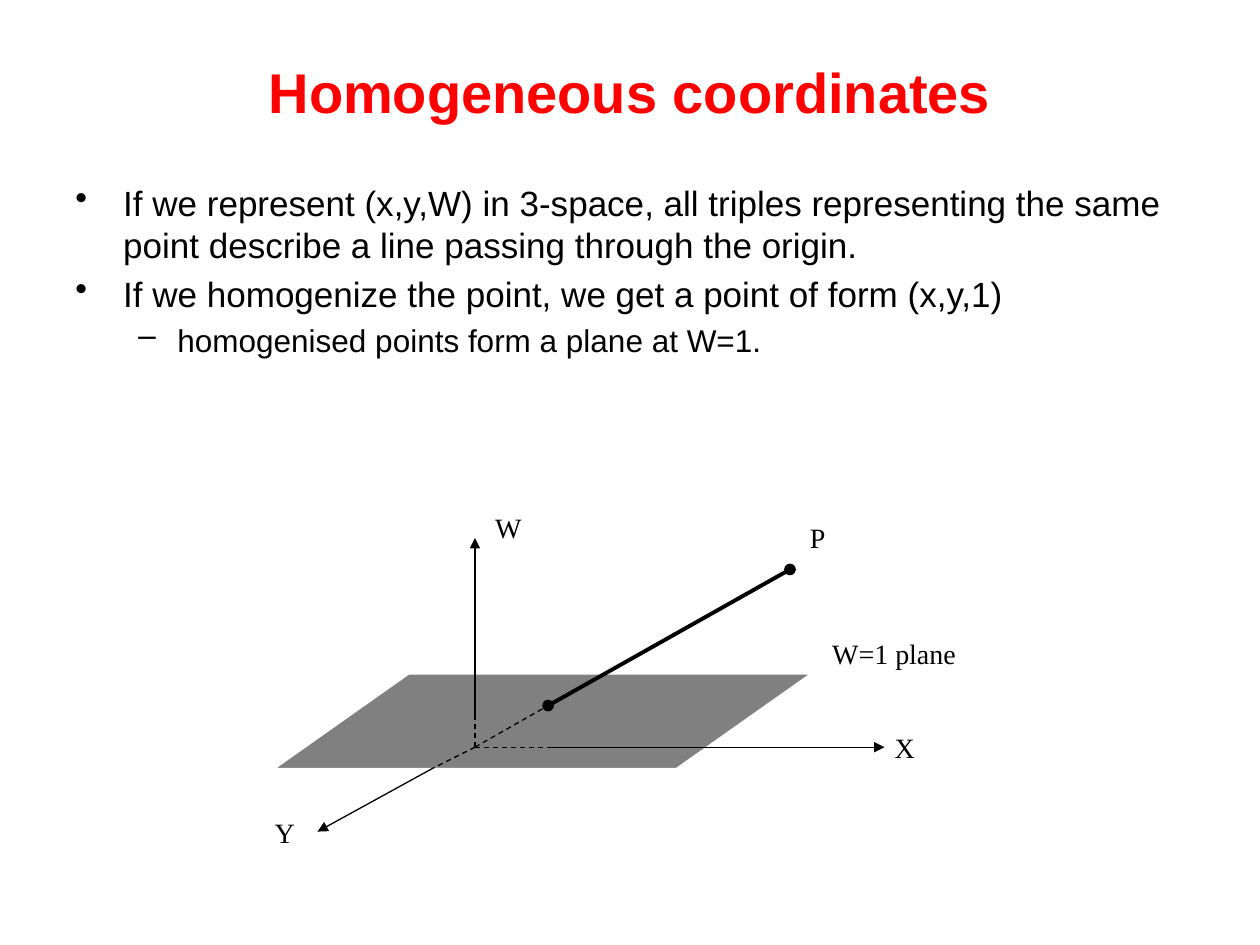
from dataclasses import dataclass

from lxml.etree import SubElement
from pptx import Presentation
from pptx.dml.color import RGBColor as Color
from pptx.enum.dml import MSO_LINE as Dash
from pptx.enum.shapes import MSO_CONNECTOR as Connector, MSO_SHAPE as Preset
from pptx.enum.text import MSO_ANCHOR as Anchor, MSO_AUTO_SIZE as AutoSize, PP_ALIGN as Align
from pptx.oxml.ns import qn
from pptx.util import Inches, Pt


@dataclass(frozen=True)
class Theme:
    title_color: Color = Color(255, 0, 0)
    ink: Color = Color(0, 0, 0)
    plane: Color = Color(128, 128, 128)
    paper: Color = Color(255, 255, 255)
    text_font: str = "Arial"
    label_font: str = "Times New Roman"
    title_size: int = 32
    body_sizes: tuple = (20, 18)
    label_size: int = 16
    thin: float = 0.75
    thick: float = 2.25


theme = Theme()
presentation = Presentation()
presentation.slide_width, presentation.slide_height = Inches(10), Inches(7.5)
slide = presentation.slides.add_slide(presentation.slide_layouts[6])

# The grid has 10 columns and 7.5 rows of square cells.
CELL = presentation.slide_width / 10


def grid(*cells):
    return [round(cell * CELL) for cell in cells]


def style(paragraph, font_name, size, color, bold=False):
    font = paragraph.font
    font.name, font.size, font.bold = font_name, Pt(size), bold
    font.color.rgb = color


# Title
title = slide.shapes.add_textbox(*grid(0.5, 0.3, 9, 0.85)).text_frame
title.word_wrap = True
title.vertical_anchor = Anchor.MIDDLE
title.text = "Homogeneous coordinates"
title.paragraphs[0].alignment = Align.CENTER
style(title.paragraphs[0], theme.text_font, theme.title_size, theme.title_color, bold=True)

# Bullets: level and text
bullets = [
    (0, "If we represent (x,y,W) in 3-space, all triples representing the same "
        "point describe a line passing through the origin."),
    (0, "If we homogenize the point, we get a point of form (x,y,1)"),
    (1, "homogenised points form a plane at W=1."),
]
levels = [("•", 0.38, 0.38), ("–", 0.81, 0.31)]  # mark, margin, hanging indent
body = slide.shapes.add_textbox(*grid(0.5, 1.39, 9, 2.37)).text_frame
body.word_wrap = True
body.text = "\n".join(text for _, text in bullets)
for paragraph, (level, _) in zip(body.paragraphs, bullets):
    mark, margin, hanging = levels[level]
    size = theme.body_sizes[level]
    paragraph.level = level
    paragraph.space_before = Pt(0.2 * size)
    style(paragraph, theme.text_font, size, theme.ink)
    properties = paragraph._p.get_or_add_pPr()
    left, indent = grid(margin, -hanging)
    properties.set("marL", str(left))
    properties.set("indent", str(indent))
    bullet = properties.makeelement(qn("a:buChar"), {"char": mark})
    properties.find(qn("a:defRPr")).addprevious(bullet)

# The plane W=1
plane = slide.shapes.add_shape(Preset.PARALLELOGRAM, *grid(2.18, 5.35, 4.25, 0.75))
plane.adjustments[0] = 1.417
plane.shadow.inherit = False
plane.fill.solid()
plane.fill.fore_color.rgb = theme.plane
plane.line.color.rgb = theme.paper
plane.line.width = Pt(theme.thin)

# Axes and the line through P, dashed where the plane hides them
origin = (3.77, 5.93)
w_exit, w_tip = (3.77, 5.68), (3.77, 4.27)
x_exit, x_tip = (4.35, 5.93), (7.02, 5.93)
y_exit, y_tip = (3.43, 6.1), (2.52, 6.6)
homogenised, point = (4.35, 5.6), (6.27, 4.52)
hidden = [(origin, end, theme.thin, {}, True) for end in (x_exit, w_exit, y_exit, homogenised)]
axes = [(start, tip, theme.thin, {"tailEnd": "triangle"}, False)
        for start, tip in ((w_exit, w_tip), (x_exit, x_tip), (y_exit, y_tip))]
ray = (homogenised, point, theme.thick, {"headEnd": "oval", "tailEnd": "oval"}, False)
for start, end, width, ends, dashed in [*hidden, *axes, ray]:
    connector = slide.shapes.add_connector(Connector.STRAIGHT, *grid(*start, *end))
    line = connector.line
    line.color.rgb = theme.ink
    line.width = Pt(width)
    if dashed:
        line.dash_style = Dash.DASH
    for tag, kind in ends.items():
        SubElement(line._get_or_add_ln(), qn(f"a:{tag}"), type=kind)
    SubElement(connector._element.spPr, qn("a:effectLst"))

# Labels: text, left, top, width
labels = [
    ("P", 6.33, 4.08, 0.32),
    ("X", 7, 5.75, 0.36),
    ("Y", 2.08, 6.42, 0.36),
    ("W", 3.83, 4, 0.41),
    ("W=1 plane", 6.5, 5, 1.19),
]
for text, left, top, width in labels:
    label = slide.shapes.add_textbox(*grid(left, top, width, 0.37)).text_frame
    label.word_wrap = False
    label.auto_size = AutoSize.SHAPE_TO_FIT_TEXT
    label.text = text
    label.paragraphs[0].alignment = Align.CENTER
    style(label.paragraphs[0], theme.label_font, theme.label_size, theme.ink)

presentation.save("out.pptx")
